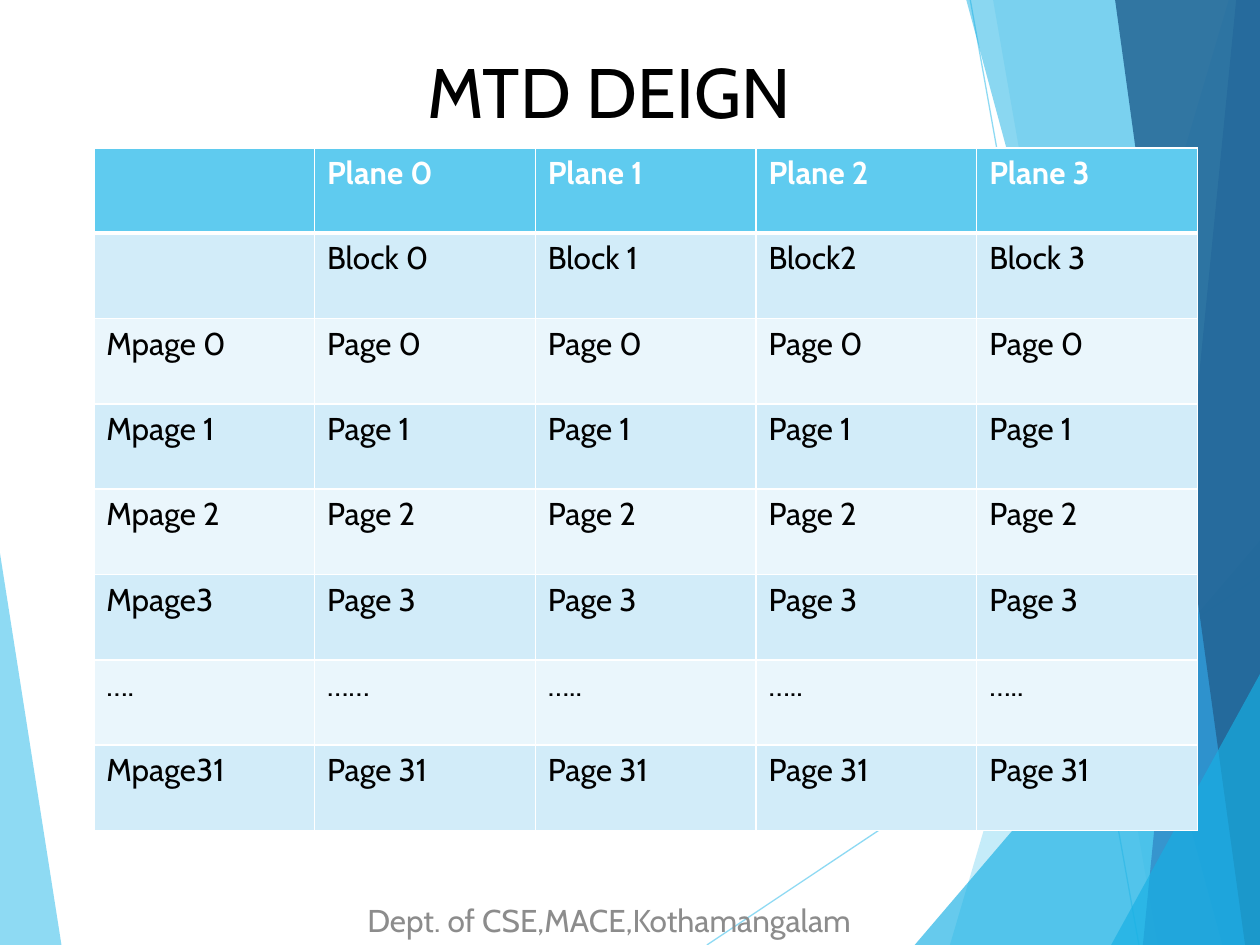
from lxml.etree import SubElement
from pptx import Presentation
from pptx.dml.color import RGBColor
from pptx.enum.shapes import MSO_CONNECTOR
from pptx.enum.text import MSO_ANCHOR, PP_ALIGN
from pptx.oxml.ns import qn
from pptx.util import Cm, Pt

SKY = RGBColor(0x5F, 0xCB, 0xEF)
CYAN = RGBColor(0x17, 0xB0, 0xE4)
BLUE = RGBColor(0x2E, 0x83, 0xC3)
NAVY = RGBColor(0x22, 0x62, 0x92)
BAND_DARK = RGBColor(0xD2, 0xEC, 0xF9)
BAND_LIGHT = RGBColor(0xEA, 0xF6, 0xFC)
WHITE = RGBColor(0xFF, 0xFF, 0xFF)
BLACK = RGBColor(0, 0, 0)
GRAY = RGBColor(0x8C, 0x8C, 0x8C)
FONT = "Cabin"
WIDTH, HEIGHT = 25.4, 19.05

TITLE = "MTD DEIGN"
FOOTER = "Dept. of CSE,MACE,Kothamangalam"
ROWS = [
    ["", "Plane 0", "Plane 1", "Plane 2", "Plane 3"],
    ["", "Block 0", "Block 1", "Block2", "Block 3"],
    ["Mpage 0"] + ["Page 0"] * 4,
    ["Mpage 1"] + ["Page 1"] * 4,
    ["Mpage 2"] + ["Page 2"] * 4,
    ["Mpage3"] + ["Page 3"] * 4,
    ["….", "……", "…..", "…..", "….."],
    ["Mpage31"] + ["Page 31"] * 4,
]
TABLE_LEFT, TABLE_TOP = 1.89, 2.98
COLUMN_WIDTH, ROW_HEIGHT = 4.45, 1.72

LEFT_WEDGE = ([(0, 11.15), (1.24, HEIGHT), (0, HEIGHT)], SKY, 70)
RAYS = [((14.25, HEIGHT), (WIDTH, 11.61)), ((19.56, 0), (22.96, HEIGHT))]
RAY_OPACITY = 70


def right_panel(top_x, bottom_x, color, opacity):
    return [(top_x, 0), (bottom_x, HEIGHT), (WIDTH, HEIGHT), (WIDTH, 0)], color, opacity


def corner(bottom_x, right_y, color, opacity):
    return [(bottom_x, HEIGHT), (WIDTH, right_y), (WIDTH, HEIGHT)], color, opacity


RIGHT_FACETS = [
    right_panel(24.77, 19.15, SKY, 36),
    right_panel(20.02, 23.34, SKY, 20),
    corner(18.44, 10.9, CYAN, 66),
    right_panel(19.48, 24.64, CYAN, 50),
    right_panel(24.92, 23.04, BLUE, 70),
    right_panel(22.48, 25.1, NAVY, 82),
    corner(22.4, 13.59, CYAN, 66),
]


def set_opacity(shape, percent):
    color = next(shape._element.spPr.iter(qn("a:srgbClr")))
    SubElement(color, qn("a:alpha"), val=str(percent * 1000))


def add_facet(slide, points, color, opacity):
    vertices = [(Cm(x), Cm(y)) for x, y in points]
    builder = slide.shapes.build_freeform(*vertices[0])
    builder.add_line_segments(vertices[1:])
    shape = builder.convert_to_shape()
    shape.shadow.inherit = False
    shape.fill.solid()
    shape.fill.fore_color.rgb = color
    shape.line.fill.background()
    set_opacity(shape, opacity)


def add_ray(slide, start, end):
    ray = slide.shapes.add_connector(
        MSO_CONNECTOR.STRAIGHT, *(Cm(value) for value in start + end))
    ray.line.color.rgb = SKY
    ray.line.width = Pt(0.75)
    set_opacity(ray, RAY_OPACITY)
    SubElement(ray._element.spPr, qn("a:effectLst"))


def style(paragraph, size, color, bold=False):
    paragraph.font.name = FONT
    paragraph.font.size = Pt(size)
    paragraph.font.color.rgb = color
    paragraph.font.bold = bold


def add_label(slide, text, top, height, size, color, anchor, spacing=1.0):
    box = slide.shapes.add_textbox(Cm(0.43), Cm(top), Cm(23.7), Cm(height))
    frame = box.text_frame
    frame.word_wrap = True
    frame.vertical_anchor = anchor
    paragraph = frame.paragraphs[0]
    paragraph.text = text
    paragraph.alignment = PP_ALIGN.CENTER
    paragraph.line_spacing = spacing
    style(paragraph, size, color)


def set_borders(cell, widths):
    properties = cell._tc.get_or_add_tcPr()
    for side, width in widths.items():
        line = SubElement(properties, qn(f"a:ln{side}"), w=str(Pt(width)))
        fill = SubElement(line, qn("a:solidFill"))
        SubElement(fill, qn("a:srgbClr"), val=str(WHITE))


def add_grid(slide):
    rows, columns = len(ROWS), len(ROWS[0])
    table = slide.shapes.add_table(
        rows, columns, Cm(TABLE_LEFT), Cm(TABLE_TOP),
        Cm(COLUMN_WIDTH * columns), Cm(ROW_HEIGHT * rows)).table
    for column in table.columns:
        column.width = Cm(COLUMN_WIDTH)
    for index, texts in enumerate(ROWS):
        table.rows[index].height = Cm(ROW_HEIGHT)
        header = index == 0
        band = SKY if header else BAND_DARK if index % 2 else BAND_LIGHT
        widths = {"L": 1, "R": 1, "T": 3 if index == 1 else 1, "B": 3 if header else 1}
        for position, text in enumerate(texts):
            cell = table.cell(index, position)
            set_borders(cell, widths)
            cell.fill.solid()
            cell.fill.fore_color.rgb = band
            cell.text = text
            style(cell.text_frame.paragraphs[0], 18, WHITE if header else BLACK, header)


def main():
    presentation = Presentation()
    presentation.slide_width, presentation.slide_height = Cm(WIDTH), Cm(HEIGHT)
    slide = presentation.slides.add_slide(presentation.slide_layouts[6])
    add_facet(slide, *LEFT_WEDGE)
    for start, end in RAYS:
        add_ray(slide, start, end)
    for facet in RIGHT_FACETS:
        add_facet(slide, *facet)
    add_label(slide, TITLE, 0, 3.99, 40, BLACK, MSO_ANCHOR.TOP, 1.5)
    add_label(slide, FOOTER, 18.03, 1.02, 18, GRAY, MSO_ANCHOR.MIDDLE)
    add_grid(slide)
    presentation.save("out.pptx")


if __name__ == "__main__":
    main()
